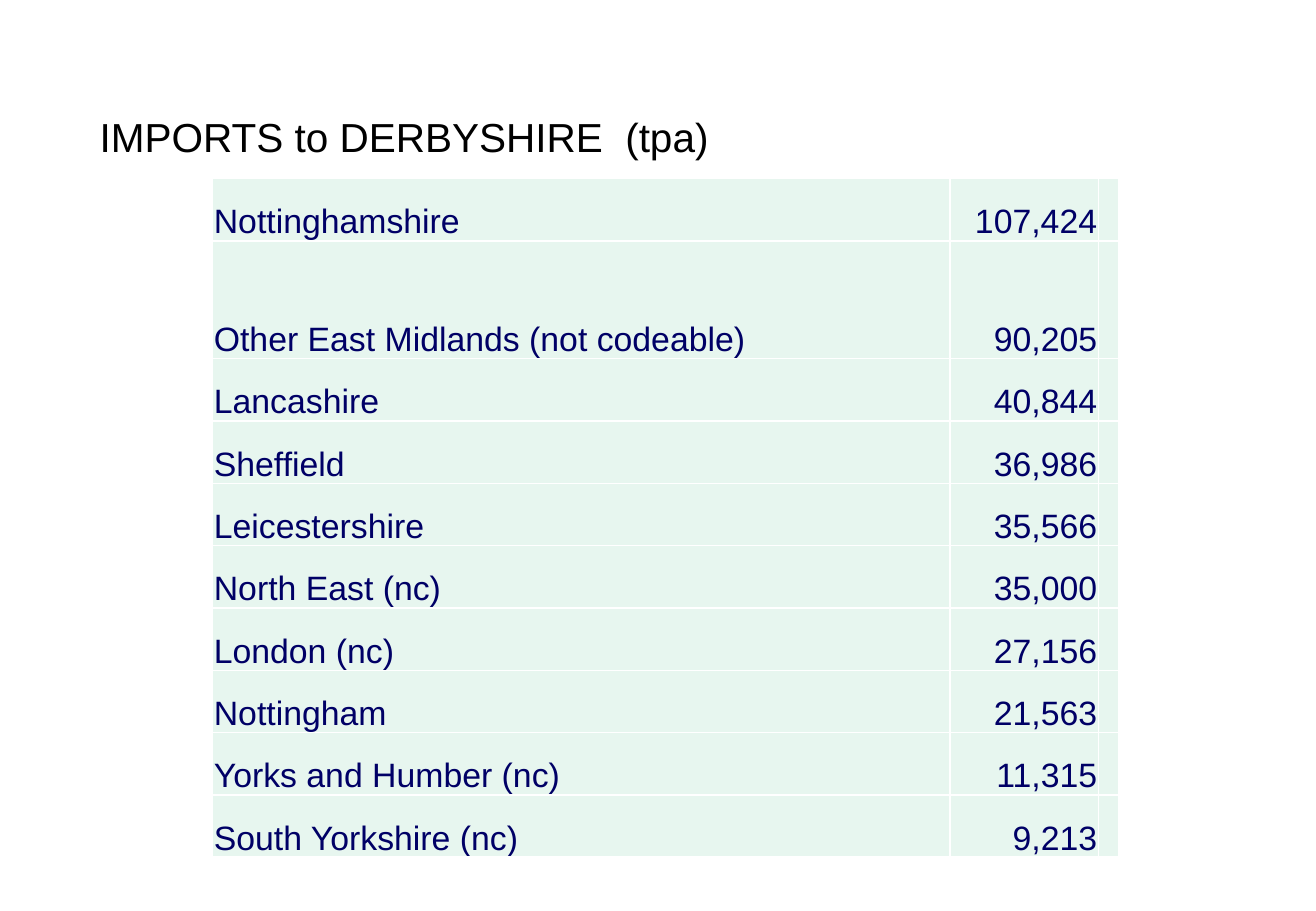
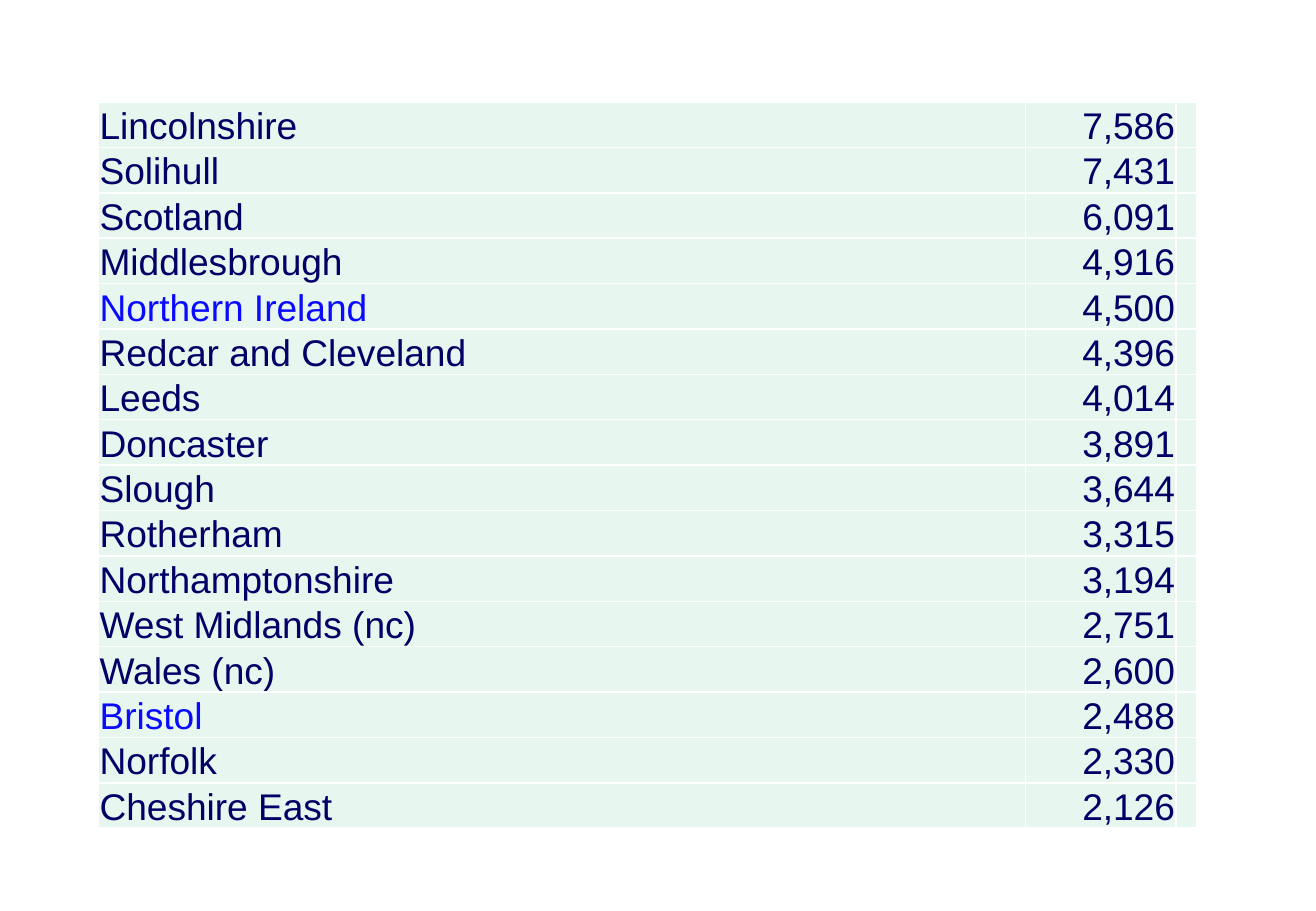
from pptx import Presentation
from pptx.dml.color import RGBColor
from pptx.enum.text import MSO_ANCHOR as Anchor, PP_ALIGN as Align
from pptx.util import Inches, Pt

NAVY = RGBColor(0x00, 0x00, 0x66)
BLUE = RGBColor(0x0A, 0x0A, 0xFF)
BLACK = RGBColor(0x00, 0x00, 0x00)
MINT = RGBColor(0xE7, 0xF6, 0xEF)

FRAME = {
    "margin_left": Inches(0.01),
    "margin_right": Inches(0.01),
    "margin_top": Inches(0.01),
    "margin_bottom": 0,
    "vertical_anchor": Anchor.BOTTOM,
}


def style(part, form):
    for name, value in form.items():
        setattr(part, name, value)


def write(para, text, size, color, align):
    para.alignment = align
    run = para.add_run()
    run.text = text
    style(run.font, {"name": "Arial", "size": Pt(size), "bold": False})
    run.font.color.rgb = color


PAGES = [
    {
        "title": "IMPORTS to DERBYSHIRE  (tpa)",
        "at": (1.75, 1.47),
        "cols": (6.07, 1.22, 0.17),
        "high": 5.59,
        "tall": {1: 0.97},
        "size": 20,
        "blue": (),
        "rows": [
            ("Nottinghamshire", "107,424"),
            ("Other East Midlands (not codeable)", "90,205"),
            ("Lancashire", "40,844"),
            ("Sheffield", "36,986"),
            ("Leicestershire", "35,566"),
            ("North East (nc)", "35,000"),
            ("London (nc)", "27,156"),
            ("Nottingham", "21,563"),
            ("Yorks and Humber (nc)", "11,315"),
            ("South Yorkshire (nc)", "9,213"),
        ],
    },
    {
        "title": None,
        "at": (0.81, 0.84),
        "cols": (7.63, 1.24, 0.17),
        "high": 5.98,
        "tall": {},
        "size": 22,
        "blue": ("Northern Ireland", "Bristol"),
        "rows": [
            ("Lincolnshire", "7,586"),
            ("Solihull", "7,431"),
            ("Scotland", "6,091"),
            ("Middlesbrough", "4,916"),
            ("Northern Ireland", "4,500"),
            ("Redcar and Cleveland", "4,396"),
            ("Leeds", "4,014"),
            ("Doncaster", "3,891"),
            ("Slough", "3,644"),
            ("Rotherham", "3,315"),
            ("Northamptonshire", "3,194"),
            ("West Midlands (nc)", "2,751"),
            ("Wales (nc)", "2,600"),
            ("Bristol", "2,488"),
            ("Norfolk", "2,330"),
            ("Cheshire East", "2,126"),
        ],
    },
]

deck = Presentation()
deck.slide_width = Inches(10.83)
deck.slide_height = Inches(7.5)
titled, blank = deck.slide_layouts[5], deck.slide_layouts[6]

for page in PAGES:
    slide = deck.slides.add_slide(titled if page["title"] else blank)
    if page["title"]:
        title = slide.shapes.title
        style(title, {"left": Inches(0.72), "top": Inches(0.87),
                      "width": Inches(9.3), "height": Inches(0.55)})
        title.text_frame.vertical_anchor = Anchor.TOP
        write(title.text_frame.paragraphs[0], page["title"], 24, BLACK, Align.LEFT)

    rows, cols, tall = page["rows"], page["cols"], page["tall"]
    left, top = page["at"]
    even = (page["high"] - sum(tall.values())) / (len(rows) - len(tall))
    table = slide.shapes.add_table(
        len(rows), len(cols), Inches(left), Inches(top),
        Inches(sum(cols)), Inches(page["high"])).table
    style(table, {"first_row": False, "horz_banding": False})
    for col, width in zip(table.columns, cols):
        col.width = Inches(width)

    for i, (place, tons) in enumerate(rows):
        table.rows[i].height = Inches(tall.get(i, even))
        for cell in table.rows[i].cells:
            style(cell, FRAME)
            cell.fill.solid()
            cell.fill.fore_color.rgb = MINT
        color = BLUE if place in page["blue"] else NAVY
        for j, (text, ink, align) in enumerate(
                [(place, color, Align.LEFT), (tons, NAVY, Align.RIGHT)]):
            para = table.cell(i, j).text_frame.paragraphs[0]
            write(para, text, page["size"], ink, align)

deck.save("out.pptx")
